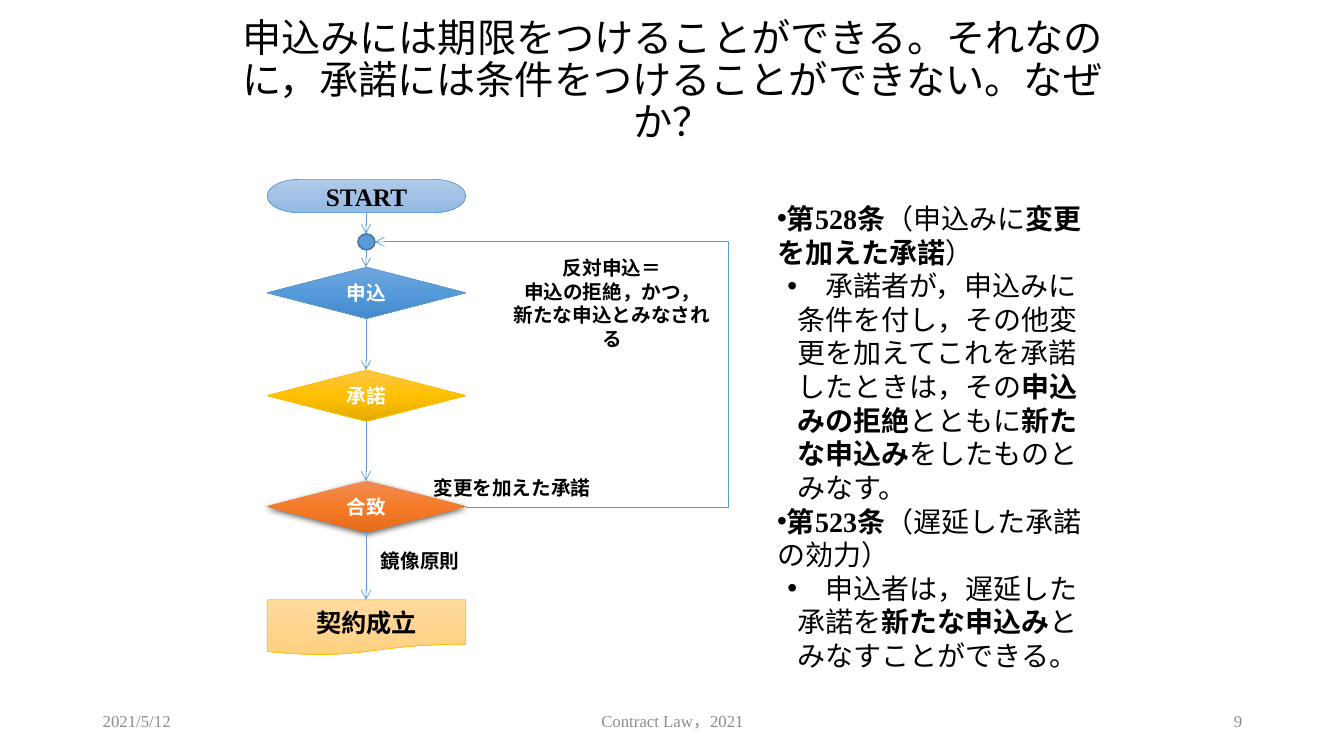
from copy import deepcopy
from dataclasses import dataclass

from lxml import etree
from pptx import Presentation
from pptx import util as u
from pptx.dml.color import RGBColor
from pptx.enum import shapes, text
from pptx.oxml.ns import qn

SCALE = 9144  # EMU in one px, 100 px to the inch
SERIF, SANS = "Times New Roman", "Noto Sans CJK JP"
HUES = {"black": "000000", "white": "FFFFFF", "grey": "8C8C8C",
        "blue": "5B9BD5", "navy": "43739E", "gold": "FFC000"}
ALIGN = {"l": text.PP_ALIGN.LEFT, "c": text.PP_ALIGN.CENTER, "r": text.PP_ALIGN.RIGHT}
KIND = shapes.MSO_SHAPE
LEFT, WIDE, MID = 265, 197, 363


@dataclass
class Step:
    label: str
    kind: KIND
    top: int
    high: int
    blend: tuple[str, str, str]
    edge: str | None
    size: int = 14
    ink: str = "white"
    shade: bool = False


@dataclass
class Note:
    words: str
    box: tuple[int, int, int, int]
    align: str = "l"


STEPS = [
    Step("START", KIND.FLOWCHART_TERMINATOR, 178, 33,
         ("B1CBE9", "A3C1E5", "93B9E4"), "blue", 18, "black"),
    Step("申込", KIND.FLOWCHART_DECISION, 265, 51, ("71A6DB", "559BDB", "448ACA"), "blue"),
    Step("承諾", KIND.FLOWCHART_DECISION, 367, 51, ("FFC64B", "FFC000", "E3AB00"), "gold"),
    Step("合致", KIND.FLOWCHART_DECISION, 477, 51,
         ("F18C57", "F67B28", "E56C19"), None, shade=True),
    Step("契約成立", KIND.FLOWCHART_DOCUMENT, 595, 55,
         ("FFDB9E", "FFD590", "FFD07C"), "gold", 18, "black"),
]
NOTES = [
    Note("変更を加えた承諾", (420, 467, 182, 34)),
    Note("鏡像原則", (368, 540, 109, 34)),
    Note("反対申込＝\n申込の拒絶，かつ，\n新たな申込とみなされる", (493, 249, 228, 81), "c"),
]
FOOT = [
    Note("2021/5/12", (92, 695, 300, 40)),
    Note("Contract Law，2021", (442, 695, 450, 40), "c"),
    Note("9", (942, 695, 300, 40), "r"),
]
TITLE = "申込みには期限をつけることができる。それなのに，承諾には条件をつけることができない。なぜか？"
LAW = """*第528条*（申込みに*変更を加えた承諾*）
　承諾者が，申込みに条件を付し，その他変更を加えてこれを承諾したときは，その*申込みの拒絶*とともに*新たな申込み*をしたものとみなす。
*第523条*（遅延した承諾の効力）
　申込者は，遅延した承諾を*新たな申込み*とみなすことができる。"""


def px(*nums: int) -> list[u.Emu]:
    return [u.Emu(n * SCALE) for n in nums]


def hue(name: str) -> RGBColor:
    return RGBColor.from_string(HUES.get(name, name))


def write(shape, words: str, *, size: int = 14, ink: str = "black", bold: bool = False,
          align: str = "l", font: str = SERIF, lead: float = 1.2, mid: bool = False,
          list_: bool = False) -> None:
    """Fill a shape with lines of text; asterisks switch bold on and off."""
    frame = shape.text_frame
    frame.word_wrap = True
    frame.vertical_anchor = text.MSO_ANCHOR.MIDDLE if mid else text.MSO_ANCHOR.TOP
    for i, line in enumerate(words.split("\n")):
        para = frame.add_paragraph() if i else frame.paragraphs[0]
        para.alignment = ALIGN[align]
        para.line_spacing = u.Pt(size * lead)
        if list_:
            bullet(para, i % 2)
        for j, part in enumerate(line.split("*")):
            if not part:
                continue
            run = para.add_run()
            run.text = part
            run.font.size, run.font.name = u.Pt(size), font
            run.font.bold = bold or j % 2 == 1
            run.font.color.rgb = hue(ink)
            etree.SubElement(run.font._element, qn("a:ea"), typeface=SANS)


def bullet(para, level: int) -> None:
    para.level = level
    props = para._p.get_or_add_pPr()
    left, hang = px(20 * level, -10 * level)
    props.set("marL", str(left))
    props.set("indent", str(hang))
    etree.SubElement(props, qn("a:buFont"), typeface="Arial")
    etree.SubElement(props, qn("a:buChar"), char="•")


def add_text(slide, box: tuple[int, int, int, int], words: str, **form) -> None:
    write(slide.shapes.add_textbox(*px(*box)), words, **form)


def blend(shape, tints: tuple[str, str, str]) -> None:
    """Fill from top to bottom with evenly spaced tints."""
    shape.fill.gradient()
    shape.fill.gradient_angle = 270
    stops = shape._element.spPr.find(".//" + qn("a:gsLst"))
    stops.append(deepcopy(stops[0]))
    for i, (stop, tint) in enumerate(zip(shape.fill.gradient_stops, tints)):
        stop.position = i / 2
        stop.color.rgb = hue(tint)


def add_shape(slide, kind: KIND, box: tuple[int, int, int, int],
              edge: str | None, weight: float):
    shape = slide.shapes.add_shape(kind, *px(*box))
    shape.shadow.inherit = False
    if edge:
        shape.line.color.rgb = hue(edge)
        shape.line.width = u.Pt(weight)
    else:
        shape.line.fill.background()
    return shape


def add_step(slide, step: Step) -> None:
    shape = add_shape(slide, step.kind, (LEFT, step.top, WIDE, step.high), step.edge, 0.5)
    blend(shape, step.blend)
    if step.shade:
        glow = etree.SubElement(shape._element.spPr.find(qn("a:effectLst")), qn("a:outerShdw"),
                                blurRad=str(u.Pt(4.5)), dist=str(u.Pt(1.5)),
                                dir="5400000", algn="ctr", rotWithShape="0")
        tint = etree.SubElement(glow, qn("a:srgbClr"), val=HUES["black"])
        etree.SubElement(tint, qn("a:alpha"), val="63000")
    write(shape, step.label, size=step.size, ink=step.ink, bold=True, align="c", mid=True)


def add_arrow(slide, start: tuple[int, int], end: tuple[int, int],
              bend: int | None = None) -> None:
    """Draw an arrow; bend is the x of the upright part of an elbow."""
    kind = shapes.MSO_CONNECTOR.STRAIGHT if bend is None else shapes.MSO_CONNECTOR.ELBOW
    line = slide.shapes.add_connector(kind, *px(*start, *end))
    line.line.color.rgb = hue("blue")
    line.line.width = u.Pt(0.5)
    etree.SubElement(line.line._get_or_add_ln(), qn("a:tailEnd"), type="arrow")
    props = line._element.spPr
    etree.SubElement(props, qn("a:effectLst"))
    if bend is not None:
        ratio = round((bend - start[0]) / (end[0] - start[0]) * 100000)
        guides = props.find(".//" + qn("a:avLst"))
        if guides is None:
            guides = etree.SubElement(props.find(qn("a:prstGeom")), qn("a:avLst"))
        etree.SubElement(guides, qn("a:gd"), name="adj1", fmla=f"val {ratio}")


def main() -> None:
    deck = Presentation()
    deck.slide_width, deck.slide_height = px(1333, 750)
    slide = deck.slides.add_slide(deck.slide_layouts[6])

    add_text(slide, (217, 30, 900, 101), TITLE, size=28, font=SANS, align="c",
             lead=1.07, mid=True)
    for note in FOOT:
        add_text(slide, note.box, note.words, size=12, ink="grey", align=note.align, mid=True)

    for step in STEPS:
        add_step(slide, step)
    joint = add_shape(slide, KIND.FLOWCHART_CONNECTOR, (355, 232, 17, 16), "navy", 1)
    joint.fill.solid()
    joint.fill.fore_color.rgb = hue("blue")

    spans = sorted([(s.top, s.top + s.high) for s in STEPS] + [(232, 248)])
    for (_, foot), (head, _) in zip(spans, spans[1:]):
        add_arrow(slide, (MID, foot), (MID, head))
    add_arrow(slide, (LEFT + WIDE, 503), (372, 240), bend=722)

    for note in NOTES:
        add_text(slide, note.box, note.words, bold=True, align=note.align)
    add_text(slide, (761, 195, 331, 448), LAW, size=20, list_=True)
    deck.save("out.pptx")


if __name__ == "__main__":
    main()
